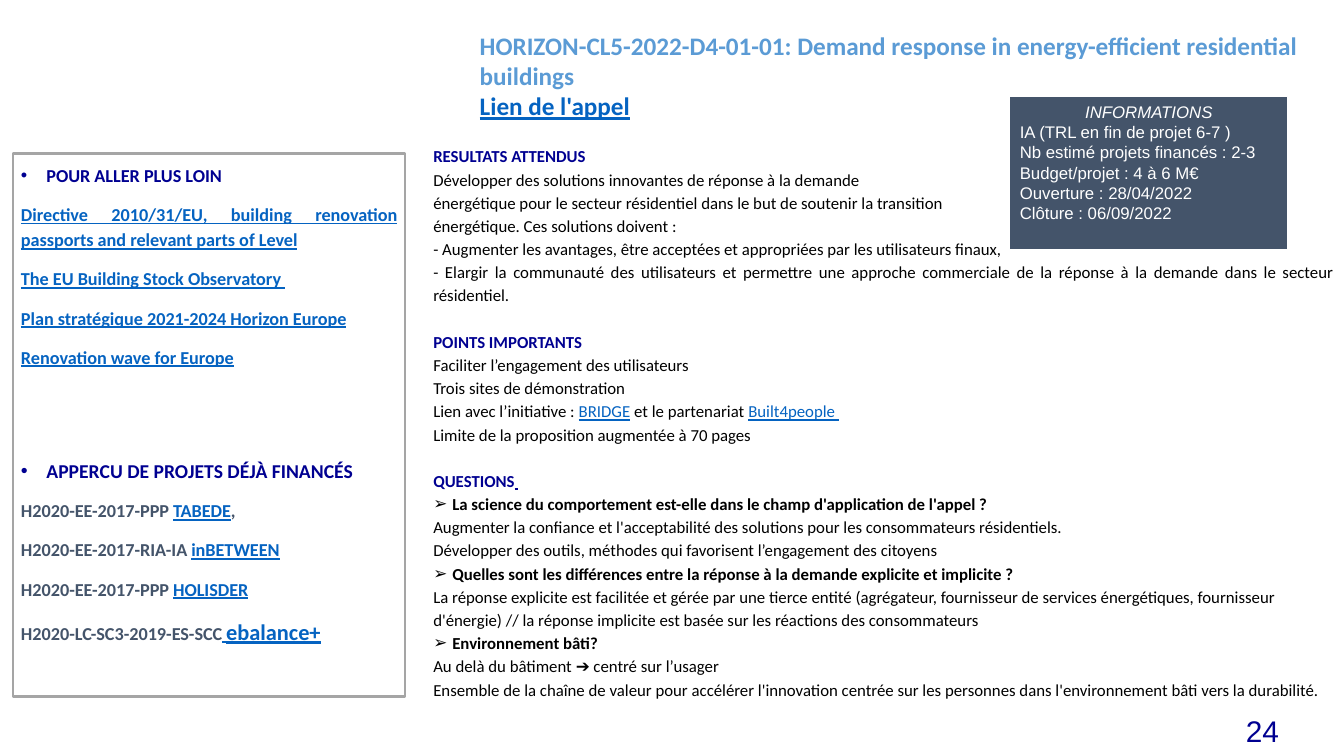
from lxml import etree
from pptx import Presentation
from pptx.dml.color import RGBColor
from pptx.enum.shapes import MSO_SHAPE
from pptx.enum.text import MSO_ANCHOR, PP_ALIGN
from pptx.oxml.ns import qn
from pptx.util import Cm, Pt

LEFT, MID, RIGHT, FULL = PP_ALIGN.LEFT, PP_ALIGN.CENTER, PP_ALIGN.RIGHT, PP_ALIGN.JUSTIFY
TOP, CENTER = MSO_ANCHOR.TOP, MSO_ANCHOR.MIDDLE
RECT = MSO_SHAPE.RECTANGLE
NAVY, BLUE, LINK, SLATE = "000091", "5B9BD5", "0563C1", "44546A"
BLACK, WHITE, GREY = "000000", "FFFFFF", "A5A5A5"


def rgb(code):
    return RGBColor.from_string(code)


def put(frame, text, size=12, color=BLACK, bold=False, slant=False, under=False,
        font="Calibri", align=LEFT, gap=0, lead=1.15, mark=None, dent=0, join=False):
    """Write a paragraph, or extend the last one; text between bars is a link."""
    para = frame.paragraphs[-1]
    if not join:
        if para.runs:
            para = frame.add_paragraph()
            para.space_before = Pt(gap)
        para.alignment, para.line_spacing = align, lead
        if mark:
            props = para._p.get_or_add_pPr()
            props.set("marL", str(Cm(dent)))
            props.set("indent", str(-Cm(dent)))
            etree.SubElement(props, qn("a:buFont")).set("typeface", "Arial")
            etree.SubElement(props, qn("a:buChar")).set("char", mark)
    for i, part in enumerate(text.split("|")):
        if part:
            run = para.add_run()
            run.text = part
            face, link = run.font, i % 2 == 1
            face.name, face.size, face.bold, face.italic = font, Pt(size), bold, slant
            face.underline = under or link
            face.color.rgb = rgb(LINK if link else color)


deck = Presentation()
deck.slide_width, deck.slide_height = Cm(33.87), Cm(19.05)
slide = deck.slides.add_slide(deck.slide_layouts[6])
shapes = slide.shapes

# Page number
page = shapes.add_textbox(Cm(28.14), Cm(17.78), Cm(4.34), Cm(1.27)).text_frame
page.word_wrap = True
page.vertical_anchor = CENTER
put(page, "24", size=21.3, color=NAVY, font="Arial", align=RIGHT, lead=1)

# Information card
card = shapes.add_shape(RECT, Cm(25.45), Cm(2.44), Cm(7.01), Cm(3.84))
card.shadow.inherit = False
card.fill.solid()
card.fill.fore_color.rgb = rgb(SLATE)
card.line.color.rgb = rgb(WHITE)
card.line.width = Pt(0.75)
info = card.text_frame
info.word_wrap = True
info.vertical_anchor = TOP
put(info, "INFORMATIONS", color=WHITE, slant=True, font="Arial", align=MID, lead=1)
for text in ("IA (TRL en fin de projet 6-7 )", "Nb estimé projets financés : 2-3",
             "Budget/projet : 4 à 6 M€", "Ouverture : 28/04/2022", "Clôture : 06/09/2022"):
    put(info, text, color=WHITE, font="Arial", lead=1)

# Main text: results and key points
main = shapes.add_textbox(Cm(10.67), Cm(3.48), Cm(23.22), Cm(14.4)).text_frame
main.word_wrap = True
parts = {
    "RESULTATS ATTENDUS": (
        "Développer des solutions innovantes de réponse à la demande ",
        "énergétique pour le secteur résidentiel dans le but de soutenir la transition ",
        "énergétique. Ces solutions doivent :",
        "- Augmenter les avantages, être acceptées et appropriées par les utilisateurs finaux,",
        "- Elargir la communauté des utilisateurs et permettre une approche commerciale de la "
        "réponse à la demande dans le secteur résidentiel."),
    "POINTS IMPORTANTS": (
        "Faciliter l’engagement des utilisateurs",
        "Trois sites de démonstration",
        "Lien avec l’initiative : |BRIDGE| et le partenariat |Built4people |",
        "Limite de la proposition augmentée à 70 pages "),
    "QUESTIONS": (),
}
for head, lines in parts.items():
    put(main, head, color=NAVY, bold=True, align=FULL, gap=16.6)
    for text in lines:
        put(main, text, align=FULL)
put(main, " ", color=NAVY, bold=True, under=True, join=True)

# Main text: questions and answers
asked = {
    "La science du comportement est-elle dans le champ d'application de l'appel ?": (
        "Augmenter la confiance et l'acceptabilité des solutions pour les consommateurs "
        "résidentiels.",
        "Développer des outils, méthodes qui favorisent l’engagement des citoyens"),
    "Quelles sont les différences entre la réponse à la demande explicite et implicite ?": (
        "La réponse explicite est facilitée et gérée par une tierce entité (agrégateur, "
        "fournisseur de services énergétiques, fournisseur d'énergie) // la réponse implicite "
        "est basée sur les réactions des consommateurs",),
    "Environnement bâti?": (
        "Au delà du bâtiment ➔ centré sur l’usager",
        "Ensemble de la chaîne de valeur pour accélérer l'innovation centrée sur les personnes "
        "dans l'environnement bâti vers la durabilité."),
}
for ask, lines in asked.items():
    put(main, ask, bold=True, mark="➢", dent=0.48)
    for text in lines:
        put(main, text)

# Title
title = shapes.add_textbox(Cm(11.84), Cm(0.64), Cm(21.36), Cm(3.33)).text_frame
title.word_wrap = True
for text in ("HORIZON-CL5-2022-D4-01-01: Demand response in energy-efficient residential buildings",
             "|Lien de l'appel|"):
    put(title, text, size=18, color=BLUE, bold=True, lead=1)

# Side panel: further reading
panel = shapes.add_shape(RECT, Cm(0.33), Cm(3.86), Cm(9.88), Cm(13.69))
panel.shadow.inherit = False
panel.fill.background()
panel.line.color.rgb = rgb(GREY)
panel.line.width = Pt(2)
side = panel.text_frame
side.word_wrap = True
side.vertical_anchor = TOP
side.margin_left = side.margin_right = side.margin_top = side.margin_bottom = Cm(0.2)
put(side, "POUR ALLER PLUS LOIN ", size=13, color=NAVY, bold=True, align=FULL,
    mark="•", dent=0.64)
for text in ("Directive 2010/31/EU, building renovation passports and relevant parts of Level",
             "The EU Building Stock Observatory ",
             "Plan stratégique 2021-2024 Horizon Europe",
             "Renovation wave for Europe"):
    put(side, f"|{text}|", size=13, bold=True, align=FULL, gap=10)

# Side panel: funded projects
put(side, "APPERCU DE PROJETS DÉJÀ FINANCÉS", size=14, color=NAVY, bold=True, gap=62.5,
    mark="•", dent=0.64)
for text in ("H2020-EE-2017-PPP |TABEDE|,", "H2020-EE-2017-RIA-IA |inBETWEEN|",
             "H2020-EE-2017-PPP |HOLISDER|", "H2020-LC-SC3-2019-ES-SCC| |"):
    put(side, text, size=13, color=SLATE, bold=True, gap=10)
put(side, "|ebalance+|", size=16, bold=True, join=True)

deck.save("out.pptx")
